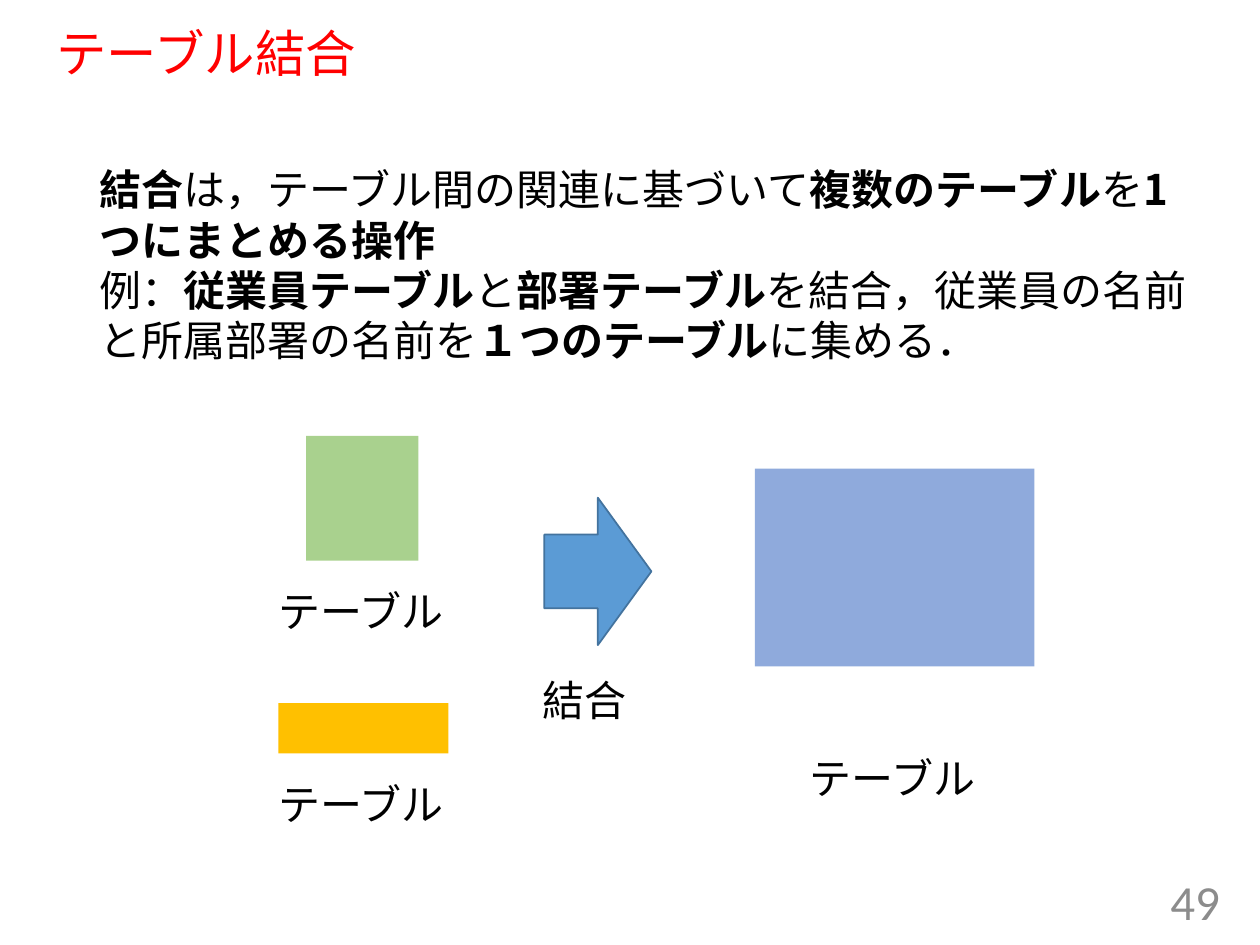
from pptx import Presentation
from pptx.dml.color import RGBColor
from pptx.enum.shapes import MSO_SHAPE
from pptx.enum.text import MSO_ANCHOR, PP_ALIGN
from pptx.oxml.ns import qn
from pptx.util import Inches, Pt

RECTANGLE, RIGHT_ARROW = MSO_SHAPE.RECTANGLE, MSO_SHAPE.RIGHT_ARROW
TOP, MIDDLE = MSO_ANCHOR.TOP, MSO_ANCHOR.MIDDLE
LEFT, RIGHT = PP_ALIGN.LEFT, PP_ALIGN.RIGHT
JAPANESE = "Noto Sans CJK JP"

presentation = Presentation()
presentation.slide_width = Inches(10)
presentation.slide_height = Inches(7.5)
slide = presentation.slides.add_slide(presentation.slide_layouts[6])
WIDTH, HEIGHT = presentation.slide_width, presentation.slide_height


def place(left, top, width, height):
    """Turn percentages of the slide's size into lengths."""
    return (int(WIDTH * left / 100), int(HEIGHT * top / 100),
            int(WIDTH * width / 100), int(HEIGHT * height / 100))


def add_text(box, paragraphs, size=24, font=JAPANESE, color="000000",
             anchor=TOP, align=LEFT, wrap=True, spacing=1.0):
    """Add a text box; each paragraph is a list of (text, bold) runs."""
    frame = slide.shapes.add_textbox(*place(*box)).text_frame
    frame.word_wrap = wrap
    frame.vertical_anchor = anchor
    for index, runs in enumerate(paragraphs):
        paragraph = frame.paragraphs[0] if index == 0 else frame.add_paragraph()
        paragraph.alignment = align
        paragraph.line_spacing = spacing
        for text, bold in runs:
            run = paragraph.add_run()
            run.text = text
            run.font.size = Pt(size)
            run.font.bold = bold
            run.font.name = font
            run.font.color.rgb = RGBColor.from_string(color)
            east_asian = run.font._element.makeelement(qn("a:ea"), {"typeface": JAPANESE})
            run.font._element.find(qn("a:latin")).addnext(east_asian)


# Title and page number
add_text((3.5, 2.53, 92.5, 6.8), [[("テーブル結合", False)]], size=28.8,
         font="Arial", color="FF0000", anchor=MIDDLE, spacing=0.9)
add_text((75.3, 92.67, 22.5, 5.33), [[("49", False)]], size=28,
         font="Calibri", color="8C8C8C", anchor=MIDDLE, align=RIGHT)

# Explanation
add_text((6.9, 16.67, 89.6, 22.93), [
    [("結合", True), ("は，テーブル間の関連に基づいて", False),
     ("複数のテーブル", True), ("を", False), ("1つにまとめる操作", True)],
    [("例：", False), ("従業員テーブル", True), ("と", False),
     ("部署テーブル", True),
     ("を結合，従業員の名前と所属部署の名前を", False),
     ("１つのテーブル", True), ("に集める．", False)],
])

# Source tables, join arrow and resulting table
for preset, box, fill, outline in [
    (RECTANGLE, (24.3, 46.13, 8.9, 13.2), "A9D18E", None),
    (RECTANGLE, (22.1, 74.4, 13.5, 5.33), "FFC000", None),
    (RIGHT_ARROW, (43.2, 52.67, 8.5, 15.6), "5B9BD5", "43739E"),
    (RECTANGLE, (59.9, 49.6, 22.2, 20.93), "8FAADC", None),
]:
    shape = slide.shapes.add_shape(preset, *place(*box))
    shape.shadow.inherit = False
    shape.fill.solid()
    shape.fill.fore_color.rgb = RGBColor.from_string(fill)
    if outline:
        shape.line.color.rgb = RGBColor.from_string(outline)
        shape.line.width = Pt(1)
    else:
        shape.line.fill.background()

# Captions
for caption, left, top, width in [
    ("テーブル", 21.1, 61.33, 15.5),
    ("テーブル", 21.1, 81.73, 15.5),
    ("結合", 42.1, 70.67, 8.8),
    ("テーブル", 63.3, 78.93, 15.5),
]:
    add_text((left, top, width, 6.67), [[(caption, False)]], wrap=False)

presentation.save("out.pptx")
